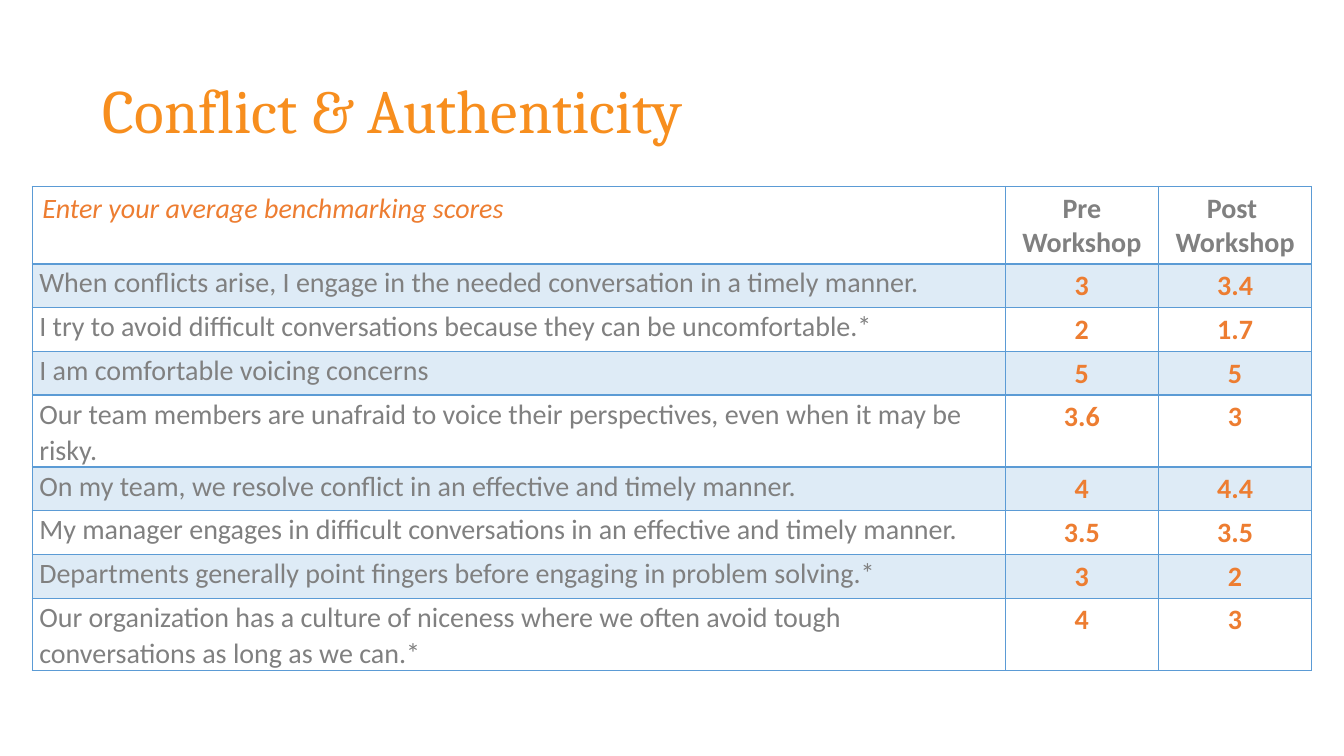
from dataclasses import dataclass

from lxml import etree
from pptx import Presentation
from pptx.dml.color import RGBColor
from pptx.enum.text import MSO_ANCHOR, PP_ALIGN
from pptx.oxml.ns import qn
from pptx.util import Inches, Pt

LEFT, CENTER = PP_ALIGN.LEFT, PP_ALIGN.CENTER
MIDDLE = MSO_ANCHOR.MIDDLE
BLANK_LAYOUT = 6


@dataclass(frozen=True)
class Theme:
    title_color: str = "F78E1E"
    accent: str = "ED7D31"
    text: str = "808080"
    blue: str = "5B9BD5"
    title_font: str = "Cambria"
    body_font: str = "Calibri"
    title_size: int = 44
    body_size: int = 20
    band_alpha: int = 20


THEME = Theme()

HEADERS = ["Enter your average benchmarking scores", "Pre Workshop", "Post \nWorkshop"]
SCORES = [
    ("When conflicts arise, I engage in the needed conversation in a timely manner.", "3", "3.4"),
    ("I try to avoid difficult conversations because they can be uncomfortable.*", "2", "1.7"),
    ("I am comfortable voicing concerns", "5", "5"),
    ("Our team members are unafraid to voice their perspectives, even when it may be risky.", "3.6", "3"),
    ("On my team, we resolve conflict in an effective and timely manner.", "4", "4.4"),
    ("My manager engages in difficult conversations in an effective and timely manner.", "3.5", "3.5"),
    ("Departments generally point fingers before engaging in problem solving.*", "3", "2"),
    ("Our organization has a culture of niceness where we often avoid tough conversations as long as we can.*",
     "4", "3"),
]
COLUMN_WIDTHS = [9.65, 1.52, 1.52]
ROW_HEIGHT = 0.41


def write_text(frame, text, *, color, font=THEME.body_font, size=THEME.body_size,
               bold=False, italic=False, align=LEFT, line_spacing=1.0):
    frame.word_wrap = True
    frame.text = text
    for paragraph in frame.paragraphs:
        paragraph.alignment = align
        paragraph.line_spacing = line_spacing
        for run in paragraph.runs:
            run.font.name = font
            run.font.size = Pt(size)
            run.font.bold = bold
            run.font.italic = italic
            run.font.color.rgb = RGBColor.from_string(color)


def style_cell(cell, *, banded, top_width, bottom_width):
    """Draw the four borders, then fill the cell with the translucent band or nothing."""
    properties = cell._tc.get_or_add_tcPr()
    widths = {"a:lnL": 1, "a:lnR": 1, "a:lnT": top_width, "a:lnB": bottom_width}
    for tag, width in widths.items():
        line = etree.SubElement(properties, qn(tag), w=str(Pt(width)))
        line_fill = etree.SubElement(line, qn("a:solidFill"))
        etree.SubElement(line_fill, qn("a:srgbClr"), val=THEME.blue)
    if banded:
        cell.fill.solid()
        cell.fill.fore_color.rgb = RGBColor.from_string(THEME.blue)
        fill_color = properties.find(qn("a:solidFill")).find(qn("a:srgbClr"))
        etree.SubElement(fill_color, qn("a:alpha"), val=str(THEME.band_alpha * 1000))
    else:
        cell.fill.background()


presentation = Presentation()
presentation.slide_width = Inches(13.33)
presentation.slide_height = Inches(7.5)
slide = presentation.slides.add_slide(presentation.slide_layouts[BLANK_LAYOUT])

title = slide.shapes.add_textbox(Inches(0.92), Inches(0.4), Inches(11.5), Inches(1.45))
title.text_frame.vertical_anchor = MIDDLE
write_text(title.text_frame, "Conflict & Authenticity", color=THEME.title_color,
           font=THEME.title_font, size=THEME.title_size, line_spacing=0.9)

rows = [HEADERS, *SCORES]
table = slide.shapes.add_table(
    len(rows), len(COLUMN_WIDTHS), Inches(0.32), Inches(1.85),
    Inches(sum(COLUMN_WIDTHS)), Inches(ROW_HEIGHT * len(rows))).table
table.horz_banding = False
for column, width in zip(table.columns, COLUMN_WIDTHS):
    column.width = Inches(width)

for row_index, row in enumerate(rows):
    is_header = row_index == 0
    table.rows[row_index].height = Inches(ROW_HEIGHT)
    for column_index, text in enumerate(row):
        cell = table.cell(row_index, column_index)
        is_label = column_index == 0
        is_statement = is_label and not is_header
        style_cell(cell, banded=row_index % 2 == 1,
                   top_width=2 if row_index == 1 else 1,
                   bottom_width=2 if is_header else 1)
        if is_statement:
            cell.margin_left = cell.margin_right = Inches(0.07)
            cell.margin_top = cell.margin_bottom = 0
        write_text(cell.text_frame, text,
                   color=THEME.accent if is_header == is_label else THEME.text,
                   bold=not is_label, italic=is_header and is_label,
                   align=LEFT if is_label else CENTER,
                   line_spacing=1.07 if is_statement else 1.0)

presentation.save("out.pptx")
